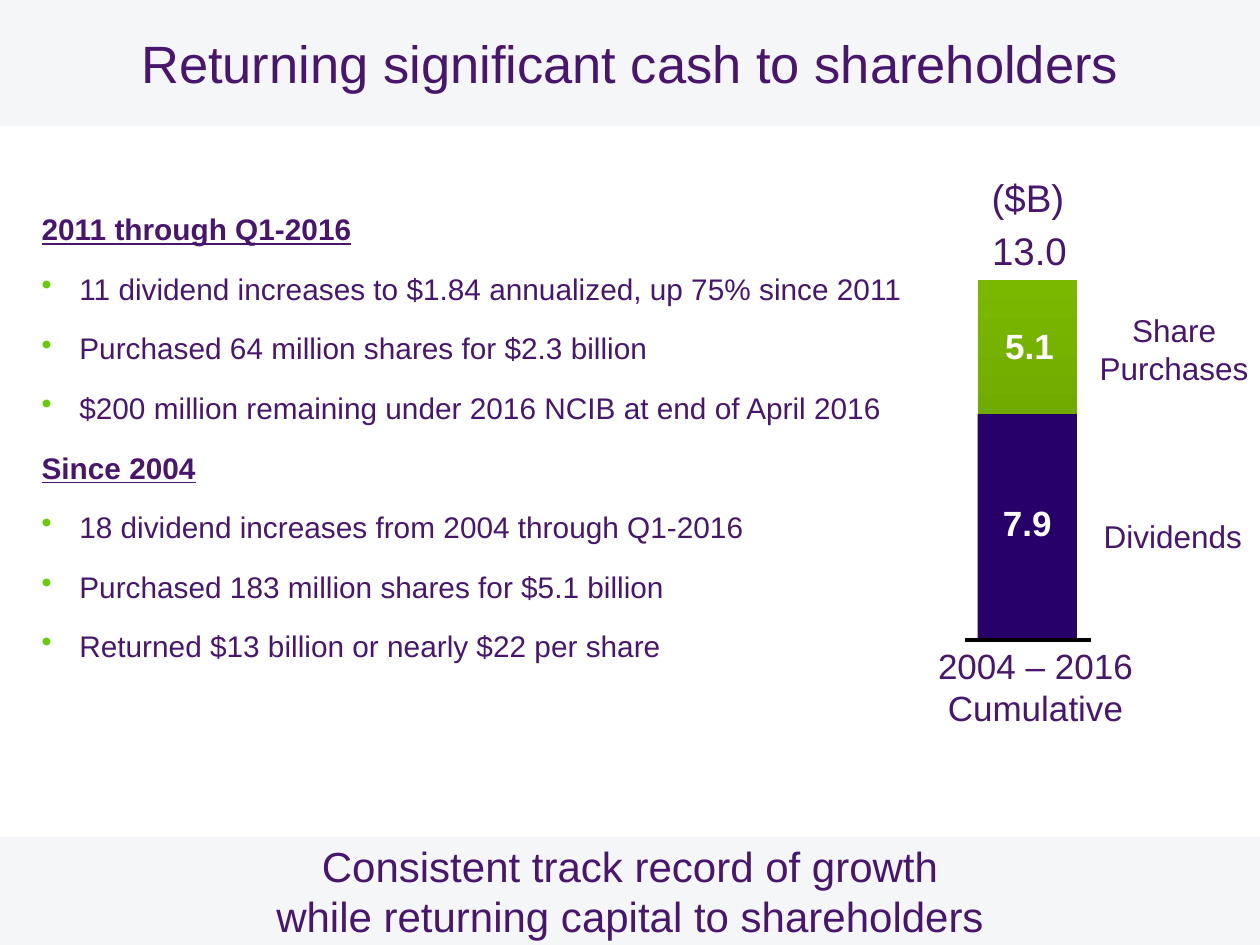
"""Build the slide on cash returned to shareholders."""
from lxml import etree
from pptx import Presentation
from pptx import util as u
from pptx.dml.color import RGBColor
from pptx.enum import shapes, text
from pptx.oxml.ns import qn

COLORS = {"purple": "49166D", "band": "F5F6F7", "bullet": "66CC00", "white": "FFFFFF",
          "green": "7AB800", "dark green": "71AB00", "indigo": "280069", "black": "000000"}
CENTER = text.PP_ALIGN.CENTER


def color(name):
    return RGBColor.from_string(COLORS[name])


def write(shape, lines, size, ink="purple", bold=None, margins=(0, 0), align=CENTER):
    frame = shape.text_frame
    frame.word_wrap = True
    frame.margin_left = frame.margin_right = u.Cm(margins[0])
    frame.margin_top = frame.margin_bottom = u.Cm(margins[1])
    frame.text = "\n".join(lines)
    for paragraph in frame.paragraphs:
        paragraph.alignment = align
        paragraph.font.name = "Arial"
        paragraph.font.size = u.Pt(size)
        paragraph.font.bold = bold
        paragraph.font.color.rgb = color(ink)
    return frame


presentation = Presentation()
presentation.slide_width = u.Cm(25.4)
presentation.slide_height = u.Cm(19.05)
slide = presentation.slides.add_slide(presentation.slide_layouts[5])

title = slide.shapes.title
title.left, title.top, title.width, title.height = u.Cm(0), u.Cm(0), u.Cm(25.4), u.Cm(2.54)
title.fill.solid()
title.fill.fore_color.rgb = color("band")
frame = write(title, ["Returning significant cash to shareholders"], 30)
frame.vertical_anchor = text.MSO_ANCHOR.MIDDLE
frame.auto_size = text.MSO_AUTO_SIZE.NONE

sections = {
    "2011 through Q1-2016": [
        "11 dividend increases to $1.84 annualized, up 75% since 2011",
        "Purchased 64 million shares for $2.3 billion",
        "$200 million remaining under 2016 NCIB at end of April 2016"],
    "Since 2004": [
        "18 dividend increases from 2004 through Q1-2016",
        "Purchased 183 million shares for $5.1 billion",
        "Returned $13 billion or nearly $22 per share"],
}
lines = [line for heading, points in sections.items() for line in (heading, *points)]
body = slide.shapes.add_textbox(u.Cm(0.84), u.Cm(3.99), u.Cm(19), u.Cm(12.22))
frame = write(body, lines, 17, align=text.PP_ALIGN.LEFT)
for index, paragraph in enumerate(frame.paragraphs):
    paragraph.line_spacing = u.Pt(28)
    paragraph.space_before = u.Pt(6 if index else 0)
    if paragraph.text in sections:
        paragraph.font.bold = paragraph.font.underline = True
        continue
    properties = paragraph._p.get_or_add_pPr()
    properties.set("marL", str(u.Cm(0.76)))
    properties.set("indent", str(-u.Cm(0.76)))
    bullet_color = etree.Element(qn("a:buClr"))
    etree.SubElement(bullet_color, qn("a:srgbClr"), val=COLORS["bullet"])
    bullet = etree.Element(qn("a:buChar"), char="•")
    properties.find(qn("a:defRPr")).addprevious(bullet_color)
    bullet_color.addnext(bullet)

rectangles = {}
for name, left, top, width, height, fill in [
        ("purchases", 19.71, 5.64, 2, 2.71, "green"),
        ("dividends", 19.71, 8.35, 2, 4.55, "indigo"),
        ("footer", 0, 16.87, 25.4, 2.18, "band")]:
    shape = slide.shapes.add_shape(shapes.MSO_SHAPE.RECTANGLE, u.Cm(left), u.Cm(top),
                                   u.Cm(width), u.Cm(height))
    shape.shadow.inherit = False
    shape.line.fill.background()
    shape.fill.solid()
    shape.fill.fore_color.rgb = color(fill)
    rectangles[name] = shape

gradient = rectangles["purchases"].fill
gradient.gradient()
gradient.gradient_angle = 270
for stop, position, name in zip(gradient.gradient_stops, (0, 1), ("green", "dark green")):
    stop.position = position
    stop.color.rgb = color(name)

frame = write(rectangles["footer"], ["Consistent track record of growth",
                                     "while returning capital to shareholders"], 24)
frame.vertical_anchor = text.MSO_ANCHOR.MIDDLE

padded, tight = (0.25, 0.13), (0, 0)
for label, left, top, width, height, size, ink, bold, margins in [
        (["($B)"], 18.82, 3.38, 3.81, 1.19, 22, "purple", None, padded),
        (["13.0"], 18.85, 4.45, 3.81, 1.19, 22, "purple", None, padded),
        (["Share Purchases"], 21.23, 6.15, 4.88, 1.8, 18, "purple", None, padded),
        (["Dividends"], 21.13, 10.29, 5.03, 1.02, 18, "purple", None, padded),
        (["5.1"], 18.95, 6.55, 3.61, 0.86, 20, "white", True, tight),
        (["7.9"], 19.71, 10.11, 2, 0.86, 20, "white", True, tight),
        (["2004 – 2016", "Cumulative"], 18.21, 13, 5.33, 1.7, 20, "purple", None, tight)]:
    box = slide.shapes.add_textbox(u.Cm(left), u.Cm(top), u.Cm(width), u.Cm(height))
    write(box, label, size, ink, bold, margins)

axis = slide.shapes.add_connector(shapes.MSO_CONNECTOR.STRAIGHT, u.Cm(19.46), u.Cm(12.9),
                                  u.Cm(22), u.Cm(12.9))
axis.line.color.rgb = color("black")
axis.line.width = u.Pt(2)
etree.SubElement(axis._element.spPr, qn("a:effectLst"))

presentation.save("out.pptx")
